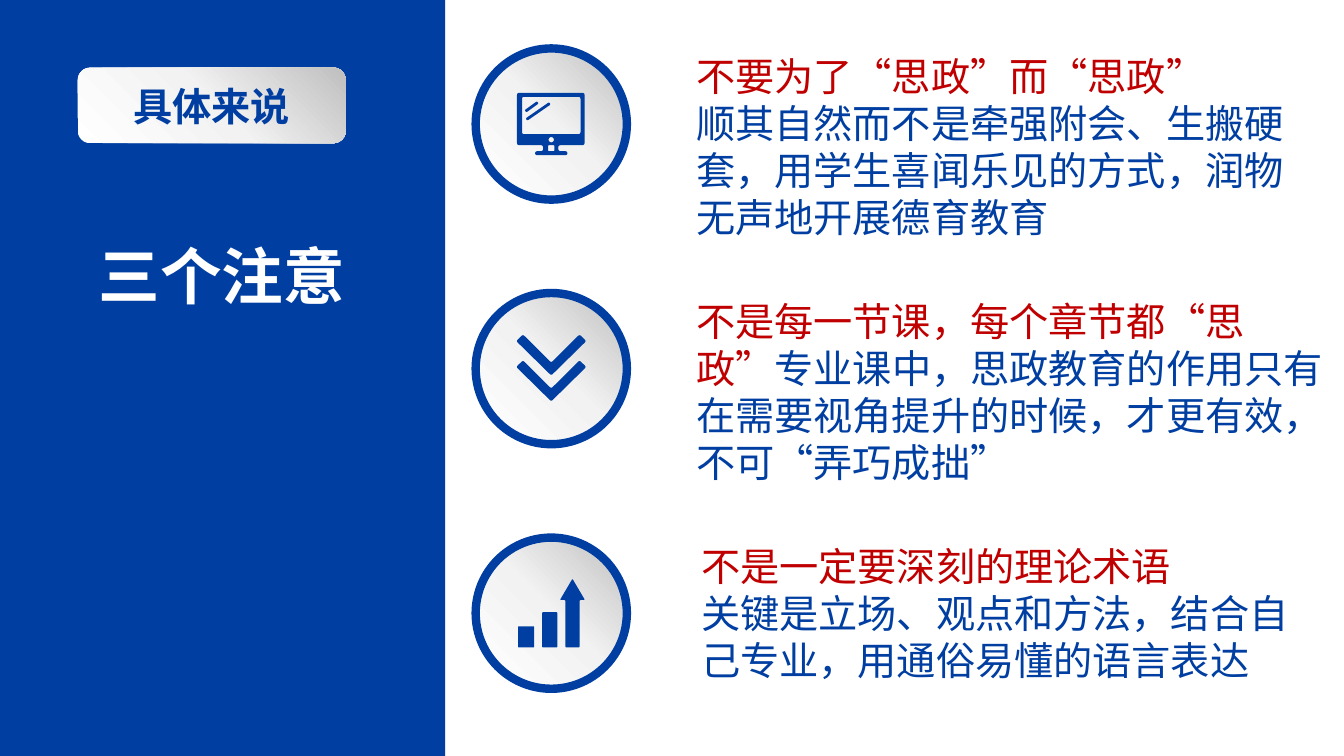
import math
from copy import deepcopy

from lxml import etree
from pptx import Presentation
from pptx.dml.color import RGBColor
from pptx.enum import shapes, text
from pptx.oxml.ns import qn
from pptx.util import Pt

COLORS = {"blue": "003FA1", "red": "C00000", "white": "FFFFFF",
          "pale": "F2F2F2", "silver": "BFBFBF"}
CJK, LATIN, HEADING = "Noto Sans CJK SC", "Arial", "Roboto Condensed"
SILVER_STOPS = [(0, "white"), (0.51, "pale"), (1, "silver")]
DISC = 108


def rgb(name):
    return RGBColor.from_string(COLORS[name])


def fill_plain(shape, color):
    shape.shadow.inherit = False
    shape.fill.solid()
    shape.fill.fore_color.rgb = rgb(color)
    shape.line.fill.background()


def fill_silver(shape):
    """Diagonal gradient, darkest at the top right."""
    shape.shadow.inherit = False
    shape.fill.gradient()
    stop_list = shape._element.spPr.find(".//" + qn("a:gsLst"))
    stop_list.insert(1, deepcopy(stop_list[0]))
    for stop, (position, color) in zip(shape.fill.gradient_stops, SILVER_STOPS):
        stop.position = position
        stop.color.rgb = rgb(color)
    shape.fill.gradient_angle = 45
    shape.line.fill.background()


def add_span(para, words, size, font, color, bold=False):
    span = para.add_run()
    span.text = words
    span.font.size = Pt(size)
    span.font.bold = bold
    span.font.color.rgb = rgb(color)
    span.font.name = font
    east_asian = etree.SubElement(span.font._element, qn("a:ea"))
    east_asian.set("typeface", CJK)


def add_text(page, left, top, width, height, paragraphs):
    """Each paragraph is a list of spans: words, size, font, color, bold."""
    box = page.shapes.add_textbox(Pt(left), Pt(top), Pt(width), Pt(height))
    frame = box.text_frame
    frame.word_wrap = True
    for index, spans in enumerate(paragraphs):
        para = frame.add_paragraph() if index else frame.paragraphs[0]
        for span in spans:
            add_span(para, *span)


def rectangle(left, top, right, bottom):
    return [(left, top), (right, top), (right, bottom), (left, bottom)]


def circle(x, y, radius, steps=24):
    angles = [2 * math.pi * step / steps for step in range(steps)]
    return [(x + radius * math.cos(a), y + radius * math.sin(a)) for a in angles]


def stroke(x1, y1, x2, y2, width):
    """Outline of a thick straight line."""
    length = math.hypot(x2 - x1, y2 - y1)
    dx, dy = (x2 - x1) / length * width / 2, (y2 - y1) / length * width / 2
    return [(x1 + dy, y1 - dx), (x2 + dy, y2 - dx),
            (x2 - dy, y2 + dx), (x1 - dy, y1 + dx)]


def soften(points, radius):
    """Round every corner with a short curve."""
    outline = []
    for index, (x, y) in enumerate(points):
        ends = []
        for nx, ny in (points[index - 1], points[(index + 1) % len(points)]):
            length = math.hypot(nx - x, ny - y)
            cut = min(radius, length / 2) / length
            ends.append((x + (nx - x) * cut, y + (ny - y) * cut))
        (ax, ay), (bx, by) = ends
        for t in (0, 0.25, 0.5, 0.75, 1):
            u = 1 - t
            outline.append((u * u * ax + 2 * u * t * x + t * t * bx,
                            u * u * ay + 2 * u * t * y + t * t * by))
    return outline


def monitor_icon():
    frame = [(29.5, 31.7), (77.8, 31.7), (77.8, 69.1), (59, 69.1), (59, 73.4),
             (65.5, 73.4), (65.5, 76.3), (42.5, 76.3), (42.5, 73.4),
             (48.2, 73.4), (48.2, 69.1), (29.5, 69.1)]
    return [soften(frame, 1.8), soften(rectangle(33.1, 34.6, 74.9, 61.2), 1.5),
            circle(54, 65.2, 1.9), soften(rectangle(51.8, 69.1, 56.2, 73.4), 0.6),
            soften(stroke(36.3, 50.8, 53, 39.2, 2), 1),
            soften(stroke(35.6, 44.9, 44.4, 38.5, 2), 1)]


def chevron_icon():
    chevron = [(33.8, 29.6), (54, 49.7), (74.2, 29.6), (79, 34.3),
               (54, 58.9), (29, 34.3)]
    return [soften([(x, y + shift) for x, y in chevron], 1.5)
            for shift in (0, 18.5)]


def growth_icon():
    arrow = [(64.1, 78.5), (64.1, 44.6), (60.2, 44.6), (69.1, 29.4),
             (78, 44.6), (74.2, 44.6), (74.2, 78.5)]
    return [soften(rectangle(30.2, 63.4, 41.8, 78.5), 0.8),
            soften(rectangle(47.5, 53.3, 58.3, 78.5), 0.8), soften(arrow, 0.9)]


def add_badge(page, left, top, contours):
    """Ringed disc with an icon drawn as one outline."""
    group = page.shapes.add_group_shape()
    disc = group.shapes.add_shape(shapes.MSO_SHAPE.OVAL, Pt(left), Pt(top),
                                  Pt(DISC), Pt(DISC))
    fill_silver(disc)
    disc.line.color.rgb = rgb("blue")
    disc.line.width = Pt(6)
    hundredths = [[(x * 100, y * 100) for x, y in contour] for contour in contours]
    builder = group.shapes.build_freeform(*hundredths[0][0], scale=Pt(1) / 100)
    for index, contour in enumerate(hundredths):
        if index:
            builder.move_to(*contour[0])
        builder.add_line_segments(contour[1:], close=True)
    fill_plain(builder.convert_to_shape(Pt(left), Pt(top)), "blue")


def add_side_panel(page, width, height):
    panel = page.shapes.add_shape(shapes.MSO_SHAPE.RECTANGLE, 0, 0,
                                  Pt(width), Pt(height))
    fill_plain(panel, "blue")
    label = page.shapes.add_shape(shapes.MSO_SHAPE.ROUNDED_RECTANGLE, Pt(55.5),
                                  Pt(48.3), Pt(191.5), Pt(54))
    fill_silver(label)
    label.text_frame.vertical_anchor = text.MSO_ANCHOR.MIDDLE
    para = label.text_frame.paragraphs[0]
    para.alignment = text.PP_ALIGN.CENTER
    add_span(para, "具体来说", 28, HEADING, "blue", True)
    add_text(page, 63.4, 166.3, 191.5, 60.5,
             [[("三个注意", 44, HEADING, "white", True)]])


def add_advice(page, left, top, icon, text_box, paragraphs):
    """Badge at the left, words in a box offset from the badge."""
    add_badge(page, left, top, icon)
    dx, dy, width, height = text_box
    add_text(page, left + dx, top + dy, width, height, paragraphs)


def main():
    deck = Presentation()
    deck.slide_width, deck.slide_height = Pt(960), Pt(540)
    page = deck.slides.add_slide(deck.slide_layouts[6])
    add_side_panel(page, 318, 540)

    def red(words):
        return words, 28, CJK, "red"

    def blue(words, font=CJK):
        return words, 28, font, "blue"

    advice = [
        (monitor_icon(), (150.5, -0.7, 453.6, 143.3),
         [[red("不要为了“思政”而“思政”")],
          [blue("顺其自然而不是牵强附会、生搬硬套，用学生喜闻乐见的方式，"
                "润物无声地开展德育教育", LATIN)]]),
        (chevron_icon(), (150.5, -0.7, 480.2, 143.3),
         [[red("不是每一节课，每个章节都“思政”"),
           blue("专业课中，思政教育的作用只有在需要视角提升的时候，才更有效，"
                "不可“弄巧成拙”")]]),
        (growth_icon(), (154, 0, 445.7, 108.7),
         [[red("不是一定要深刻的理论术语")],
          [blue("关键是立场、观点和方法，结合自己专业，用通俗易懂的语言表达")]]),
    ]
    for row, (icon, text_box, paragraphs) in enumerate(advice):
        add_advice(page, 339.8, 34.6 + row * 174.7, icon, text_box, paragraphs)
    deck.save("out.pptx")


if __name__ == "__main__":
    main()
